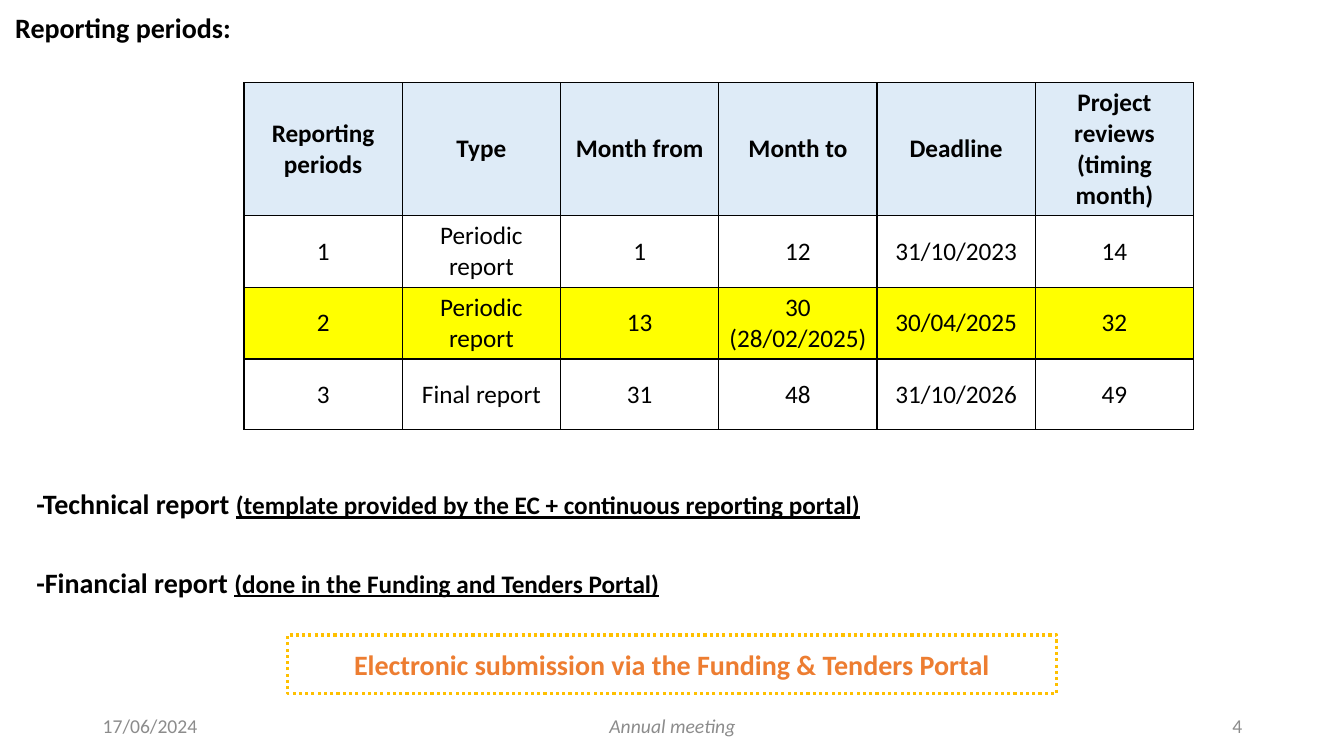
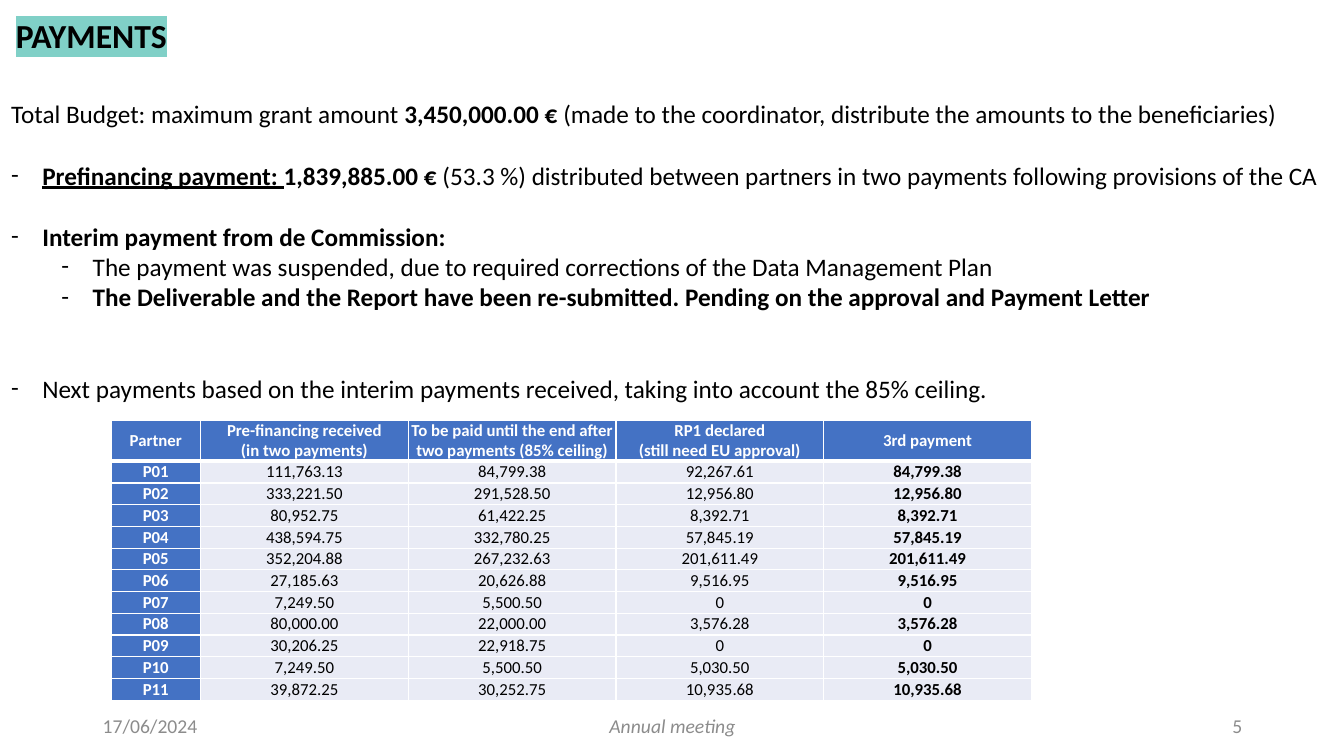
from dataclasses import dataclass

from lxml import etree
from pptx import Presentation
from pptx.dml.color import RGBColor
from pptx.enum.dml import MSO_LINE
from pptx.enum.shapes import MSO_SHAPE
from pptx.enum.text import MSO_ANCHOR, MSO_AUTO_SIZE, PP_ALIGN
from pptx.oxml.ns import qn
from pptx.presentation import Presentation as Deck
from pptx.shapes.base import BaseShape
from pptx.slide import Slide
from pptx.table import Table
from pptx.text.text import Font, TextFrame
from pptx.util import Inches, Pt

LEFT, CENTER, RIGHT, JUSTIFY = PP_ALIGN.LEFT, PP_ALIGN.CENTER, PP_ALIGN.RIGHT, PP_ALIGN.JUSTIFY
TOP, MIDDLE, BOTTOM = MSO_ANCHOR.TOP, MSO_ANCHOR.MIDDLE, MSO_ANCHOR.BOTTOM
RECTANGLE, ROUND_DOT = MSO_SHAPE.RECTANGLE, MSO_LINE.ROUND_DOT
FIXED_SIZE = MSO_AUTO_SIZE.NONE
TITLE_AND_CONTENT = 1


# Theme
@dataclass(frozen=True)
class Theme:
    font: str = "Calibri"
    black: str = "000000"
    white: str = "FFFFFF"
    gray: str = "8C8C8C"
    orange: str = "ED7D31"
    gold: str = "FFC000"
    teal: str = "80D0C7"
    yellow: str = "FFFF00"
    pale_blue: str = "DEEBF7"
    blue: str = "4472C4"
    lavender: str = "E9EBF5"
    heading: int = 24
    strong: int = 20
    body: int = 18
    footer: int = 14
    small: int = 12


THEME = Theme()


@dataclass(frozen=True)
class Box:
    left: float
    top: float
    width: float
    height: float


@dataclass(frozen=True)
class Span:
    text: str
    bold: bool = False
    underline: bool = False
    size: int = THEME.body


@dataclass(frozen=True)
class Line:
    spans: tuple[Span, ...]
    space_before: float = 0
    indent: float = 0  # left edge of the text; a dash hangs before it
    level: int = 0


@dataclass(frozen=True)
class CellStyle:
    fill: str | None
    size: int
    bold: bool = False
    color: str = THEME.black
    inset: float | None = None


@dataclass(frozen=True)
class Footer:
    text: str
    box: Box
    alignment: PP_ALIGN
    italic: bool = False


# Content
HANGING = 0.31
BLANK_LINE = 22

PERIODS = [
    ("Reporting periods", "Type", "Month from", "Month to", "Deadline",
     "Project reviews (timing month)"),
    ("1", "Periodic report", "1", "12", "31/10/2023", "14"),
    ("2", "Periodic report", "13", "30\n(28/02/2025)", "30/04/2025", "32"),
    ("3", "Final report", "31", "48", "31/10/2026", "49"),
]
CURRENT_PERIOD = 2

REPORTS = [
    Line((Span("-Technical report ", True, size=THEME.strong),
          Span("(template provided by the EC + continuous reporting portal)", True, True))),
    Line((Span("-Financial report ", True, size=THEME.strong),
          Span("(done in the Funding and Tenders Portal)", True, True)), space_before=32),
]

PAYMENT_NOTES = [
    Line((Span("Total Budget: maximum grant amount "), Span("3,450,000.00 € ", True),
          Span("(made to the coordinator, distribute the amounts to the beneficiaries)"))),
    Line((Span("Prefinancing payment: ", True, True), Span("1,839,885.00 €", True),
          Span(" (53.3 %) distributed between partners in two payments "
               "following provisions of the CA")), BLANK_LINE, HANGING),
    Line((Span("Interim payment from de Commission:", True),), BLANK_LINE, HANGING),
    Line((Span("The payment was suspended, due to required corrections of the "
               "Data Management Plan"),), 0, 0.81, 1),
    Line((Span("The Deliverable and the Report have been re-submitted. "
               "Pending on the approval and Payment Letter", True),), 0, 0.81, 1),
    Line((Span("Next payments based on the interim payments received, "
               "taking into account the 85% ceiling."),), 2 * BLANK_LINE, HANGING),
]

PAYMENTS = [
    ("Partner", "Pre-financing received\n(in two payments)",
     "To be paid until the end after two payments (85% ceiling)",
     "RP1 declared\n(still need EU approval)", "3rd payment"),
    ("P01", "111,763.13", "84,799.38", "92,267.61", "84,799.38"),
    ("P02", "333,221.50", "291,528.50", "12,956.80", "12,956.80"),
    ("P03", "80,952.75", "61,422.25", "8,392.71", "8,392.71"),
    ("P04", "438,594.75", "332,780.25", "57,845.19", "57,845.19"),
    ("P05", "352,204.88", "267,232.63", "201,611.49", "201,611.49"),
    ("P06", "27,185.63", "20,626.88", "9,516.95", "9,516.95"),
    ("P07", "7,249.50", "5,500.50", "0", "0"),
    ("P08", "80,000.00", "22,000.00", "3,576.28", "3,576.28"),
    ("P09", "30,206.25", "22,918.75", "0", "0"),
    ("P10", "7,249.50", "5,500.50", "5,030.50", "5,030.50"),
    ("P11", "39,872.25", "30,252.75", "10,935.68", "10,935.68"),
]


# Shared helpers
def set_font(font: Font, size: int, color: str = THEME.black, bold: bool = False) -> None:
    font.name, font.size, font.bold = THEME.font, Pt(size), bold
    font.color.rgb = RGBColor.from_string(color)


def place(shape: BaseShape, box: Box) -> None:
    shape.left, shape.top = Inches(box.left), Inches(box.top)
    shape.width, shape.height = Inches(box.width), Inches(box.height)


def prepare_frame(frame: TextFrame, anchor: MSO_ANCHOR) -> None:
    frame.word_wrap = True
    frame.auto_size = FIXED_SIZE
    frame.vertical_anchor = anchor


def add_title(slide: Slide, text: str, box: Box, size: int, alignment: PP_ALIGN,
              anchor: MSO_ANCHOR, highlight: str | None = None) -> None:
    title = slide.shapes.title
    place(title, box)
    prepare_frame(title.text_frame, anchor)
    paragraph = title.text_frame.paragraphs[0]
    paragraph.alignment = alignment
    run = paragraph.add_run()
    run.text = text
    if highlight is None:
        set_font(paragraph.font, size, bold=True)
        return
    set_font(run.font, size, bold=True)
    paragraph.line_spacing = 0.9
    mark = etree.Element(qn("a:highlight"))
    etree.SubElement(mark, qn("a:srgbClr"), val=highlight)
    run.font._element.find(qn("a:solidFill")).addnext(mark)


def add_body(slide: Slide, lines: list[Line], box: Box, alignment: PP_ALIGN) -> None:
    body = slide.placeholders[1]
    place(body, box)
    frame = body.text_frame
    prepare_frame(frame, TOP)
    for index, line in enumerate(lines):
        paragraph = frame.paragraphs[0] if index == 0 else frame.add_paragraph()
        paragraph.alignment, paragraph.level = alignment, line.level
        paragraph.space_before = Pt(line.space_before)
        properties = paragraph._p.get_or_add_pPr()
        properties.set("marL", str(Inches(line.indent)))
        properties.set("indent", str(Inches(-HANGING if line.indent else 0)))
        if line.indent:
            etree.SubElement(properties, qn("a:buFont"), typeface=THEME.font)
            etree.SubElement(properties, qn("a:buChar"), char="-")
        else:
            etree.SubElement(properties, qn("a:buNone"))
        for span in line.spans:
            run = paragraph.add_run()
            run.text = span.text
            set_font(run.font, span.size, bold=span.bold)
            run.font.underline = span.underline


def add_footers(slide: Slide, number: int) -> None:
    footers = (
        Footer(str(number), Box(9.42, 7, 3, 0.4), RIGHT),
        Footer("Annual meeting", Box(4.42, 7, 4.5, 0.4), CENTER, italic=True),
        Footer("17/06/2024", Box(0.92, 7, 3, 0.4), LEFT),
    )
    for footer in footers:
        shape = slide.shapes.add_textbox(0, 0, 0, 0)
        place(shape, footer.box)
        prepare_frame(shape.text_frame, MIDDLE)
        paragraph = shape.text_frame.paragraphs[0]
        paragraph.text, paragraph.alignment = footer.text, footer.alignment
        set_font(paragraph.font, THEME.footer, THEME.gray)
        paragraph.font.italic = footer.italic


# Tables
def add_grid(slide: Slide, rows: list[tuple[str, ...]], left: float, top: float,
             widths: list[float], heights: list[float]) -> Table:
    table = slide.shapes.add_table(
        len(rows), len(widths), Inches(left), Inches(top),
        Inches(sum(widths)), Inches(sum(heights))).table
    table.first_row = table.horz_banding = False
    for column, width in zip(table.columns, widths):
        column.width = Inches(width)
    for row, height in zip(table.rows, heights):
        row.height = Inches(height)
    return table


def fill_cell(table: Table, row: int, column: int, text: str, style: CellStyle,
              border: str, top_width: float = 1, bottom_width: float = 1) -> None:
    cell = table.cell(row, column)
    cell.text = text
    cell.vertical_anchor = MIDDLE
    if style.inset is not None:
        cell.margin_left = cell.margin_right = Inches(style.inset)
        cell.margin_top = cell.margin_bottom = Inches(style.inset)
    for paragraph in cell.text_frame.paragraphs:
        paragraph.alignment = CENTER
        set_font(paragraph.font, style.size, style.color, style.bold)
    if style.fill is None:
        cell.fill.background()
    else:
        cell.fill.solid()
        cell.fill.fore_color.rgb = RGBColor.from_string(style.fill)
    properties = cell._tc.get_or_add_tcPr()
    edges = (("L", 1), ("R", 1), ("T", top_width), ("B", bottom_width))
    for index, (side, width) in enumerate(edges):
        edge = etree.Element(qn(f"a:ln{side}"), w=str(Pt(width)))
        solid = etree.SubElement(edge, qn("a:solidFill"))
        etree.SubElement(solid, qn("a:srgbClr"), val=border)
        properties.insert(index, edge)


# Slides
def build_reporting(slide: Slide) -> None:
    add_title(slide, "Reporting periods:", Box(0.05, 0.05, 2.5, 0.44), THEME.strong, LEFT, TOP)
    table = add_grid(slide, PERIODS, 2.42, 0.82, [1.57] * 6, [1.3] + [0.7] * 3)
    header = CellStyle(THEME.pale_blue, THEME.body, bold=True)
    plain = CellStyle(None, THEME.body)
    current = CellStyle(THEME.yellow, THEME.body)
    for row, values in enumerate(PERIODS):
        style = {0: header, CURRENT_PERIOD: current}.get(row, plain)
        for column, text in enumerate(values):
            fill_cell(table, row, column, text, style, THEME.black)
    add_body(slide, REPORTS, Box(0.26, 4.78, 8.6, 1.4), LEFT)

    # Submission banner
    banner = slide.shapes.add_shape(RECTANGLE, 0, 0, 0, 0)
    place(banner, Box(2.85, 6.3, 7.63, 0.58))
    banner.shadow.inherit = False
    banner.fill.background()
    banner.line.color.rgb = RGBColor.from_string(THEME.gold)
    banner.line.width = Pt(2.25)
    banner.line.dash_style = ROUND_DOT
    prepare_frame(banner.text_frame, MIDDLE)
    paragraph = banner.text_frame.paragraphs[0]
    paragraph.text = "Electronic submission via the Funding & Tenders Portal"
    paragraph.alignment = CENTER
    set_font(paragraph.font, THEME.strong, THEME.orange, bold=True)


def build_payments(slide: Slide) -> None:
    add_title(slide, "PAYMENTS", Box(0, 0.14, 1.81, 0.46), THEME.heading, CENTER, BOTTOM,
              THEME.teal)
    add_body(slide, PAYMENT_NOTES, Box(0.01, 0.93, 13.31, 3.13), JUSTIFY)
    partners = len(PAYMENTS) - 1
    header_height, table_height = 0.4, 2.77
    row_height = (table_height - header_height) / partners
    table = add_grid(slide, PAYMENTS, 1.1, 4.17, [0.89] + [2.06] * 4,
                     [header_height] + [row_height] * partners)
    label = CellStyle(THEME.blue, THEME.small, bold=True, color=THEME.white, inset=0)
    amount = CellStyle(THEME.lavender, THEME.small, inset=0)
    total = CellStyle(THEME.lavender, THEME.small, bold=True, inset=0)
    for row, values in enumerate(PAYMENTS):
        styles = [label] * 5 if row == 0 else [label, amount, amount, amount, total]
        for column, (text, style) in enumerate(zip(values, styles)):
            fill_cell(table, row, column, text, style, THEME.white,
                      top_width=3 if row == 1 else 1, bottom_width=3 if row == 0 else 1)


def main() -> None:
    presentation: Deck = Presentation()
    presentation.slide_width, presentation.slide_height = Inches(13.33), Inches(7.5)
    layout = presentation.slide_layouts[TITLE_AND_CONTENT]
    for number, build in enumerate((build_reporting, build_payments), start=4):
        slide = presentation.slides.add_slide(layout)
        build(slide)
        add_footers(slide, number)
    presentation.save("out.pptx")


if __name__ == "__main__":
    main()
